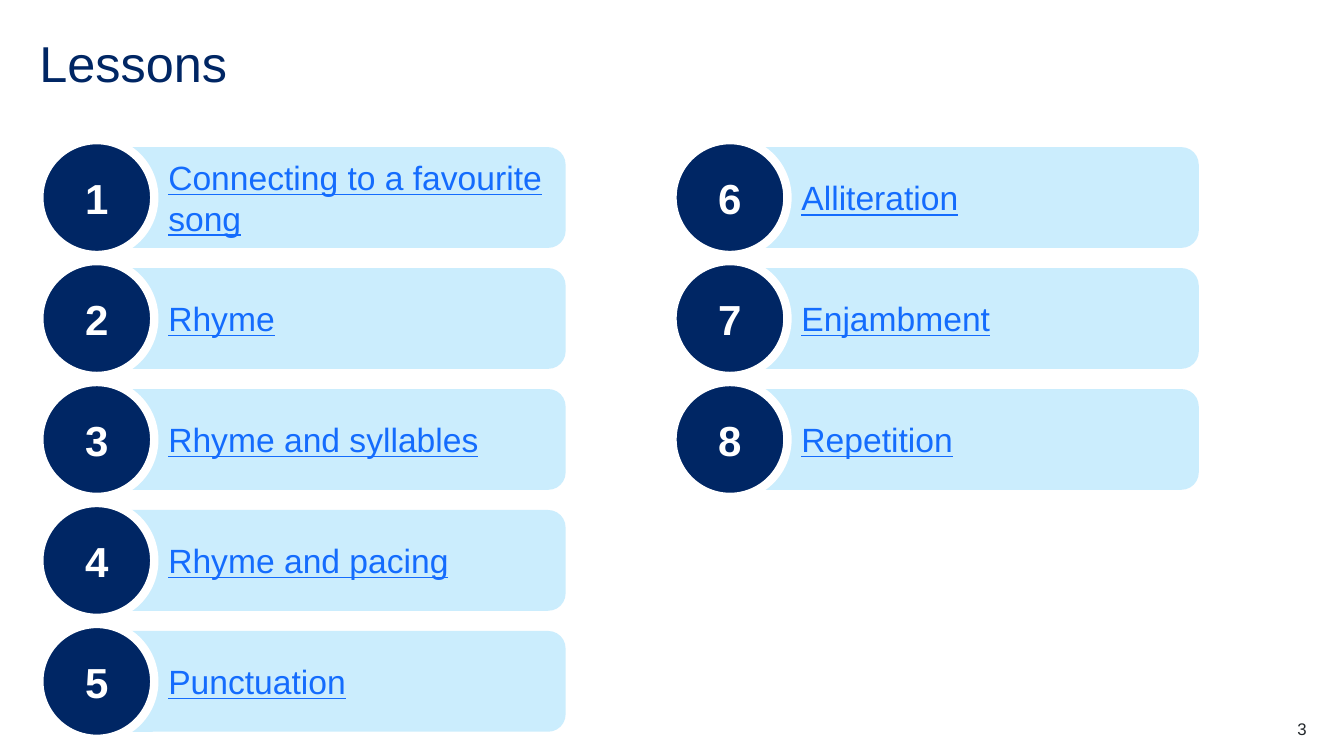
from dataclasses import dataclass

from pptx import Presentation
from pptx.dml.color import RGBColor
from pptx.enum.shapes import MSO_SHAPE
from pptx.enum.text import MSO_ANCHOR, MSO_AUTO_SIZE, PP_ALIGN
from pptx.util import Inches, Pt

ROUNDED, OVAL = MSO_SHAPE.ROUNDED_RECTANGLE, MSO_SHAPE.OVAL
TOP, MIDDLE = MSO_ANCHOR.TOP, MSO_ANCHOR.MIDDLE
LEFT, CENTER, RIGHT = PP_ALIGN.LEFT, PP_ALIGN.CENTER, PP_ALIGN.RIGHT
NO_FIT = MSO_AUTO_SIZE.NONE

COLUMNS = [
    ["Connecting to a favourite song", "Rhyme", "Rhyme and syllables",
     "Rhyme and pacing", "Punctuation"],
    ["Alliteration", "Enjambment", "Repetition"],
]
COLUMN_LEFT, COLUMN_STEP = 0.39, 6.28
ROW_TOP, ROW_STEP = 1.39, 1.2


@dataclass(frozen=True)
class Theme:
    font: str = "Arial"
    navy: str = "002664"
    sky: str = "CBEDFD"
    link: str = "146CFD"
    ink: str = "22272B"
    white: str = "FFFFFF"
    title_size: int = 36
    number_size: int = 30
    lesson_size: int = 24
    footer_size: int = 12


class LessonSlide:
    def __init__(self, prs, theme):
        self.theme = theme
        self.s = prs.slides.add_slide(prs.slide_layouts[5])

    def add_text(self, sp, text, size, color, align=LEFT, anchor=MIDDLE,
                 bold=False, underline=False):
        tf = sp.text_frame
        tf.word_wrap = True
        tf.auto_size = NO_FIT
        tf.vertical_anchor = anchor
        p = tf.paragraphs[0]
        p.alignment = align
        r = p.add_run()
        r.text = text
        r.font.name = self.theme.font
        r.font.size = Pt(size)
        r.font.bold = bold
        r.font.underline = underline
        r.font.color.rgb = RGBColor.from_string(color)
        return p

    def clear_margins(self, sp):
        tf = sp.text_frame
        tf.margin_left = tf.margin_top = tf.margin_right = tf.margin_bottom = 0

    def title(self, text):
        sp = self.s.shapes.title
        sp.left, sp.top = Inches(0.39), Inches(0.39)
        sp.width, sp.height = Inches(12.56), Inches(0.6)
        self.clear_margins(sp)
        p = self.add_text(sp, text, self.theme.title_size, self.theme.navy, anchor=TOP)
        p.line_spacing = 0.9

    def shape(self, shapes, kind, x, y, w, h, fill):
        sp = shapes.add_shape(kind, Inches(x), Inches(y), Inches(w), Inches(h))
        sp.shadow.inherit = False
        sp.fill.solid()
        sp.fill.fore_color.rgb = RGBColor.from_string(fill)
        sp.line.fill.background()
        return sp

    def lesson(self, number, text, x, y):
        t = self.theme
        group = self.s.shapes.add_group_shape()
        bar = self.shape(group.shapes, ROUNDED, x + 0.74, y + 0.07, 4.48, 1, t.sky)
        bar.adjustments[0] = 0.173
        p = self.add_text(bar, text, t.lesson_size, t.link, underline=True)
        p._p.get_or_add_pPr().set("marL", str(Inches(0.39)))
        badge = self.shape(group.shapes, OVAL, x, y, 1.14, 1.14, t.navy)
        badge.line.color.rgb = RGBColor.from_string(t.white)
        badge.line.width = Pt(6)
        self.add_text(badge, str(number), t.number_size, t.white, CENTER, bold=True)

    def page_number(self, number):
        sp = self.s.shapes.add_textbox(Inches(12.17), Inches(7.13),
                                       Inches(0.79), Inches(0.2))
        self.clear_margins(sp)
        self.add_text(sp, str(number), self.theme.footer_size, self.theme.ink, RIGHT, TOP)


def main():
    prs = Presentation()
    prs.slide_width, prs.slide_height = Inches(13.33), Inches(7.5)
    slide = LessonSlide(prs, Theme())
    slide.title("Lessons")
    number = 1
    for col, lessons in enumerate(COLUMNS):
        for row, text in enumerate(lessons):
            slide.lesson(number, text, COLUMN_LEFT + col * COLUMN_STEP,
                         ROW_TOP + row * ROW_STEP)
            number += 1
    slide.page_number(3)
    prs.save("out.pptx")


if __name__ == "__main__":
    main()
